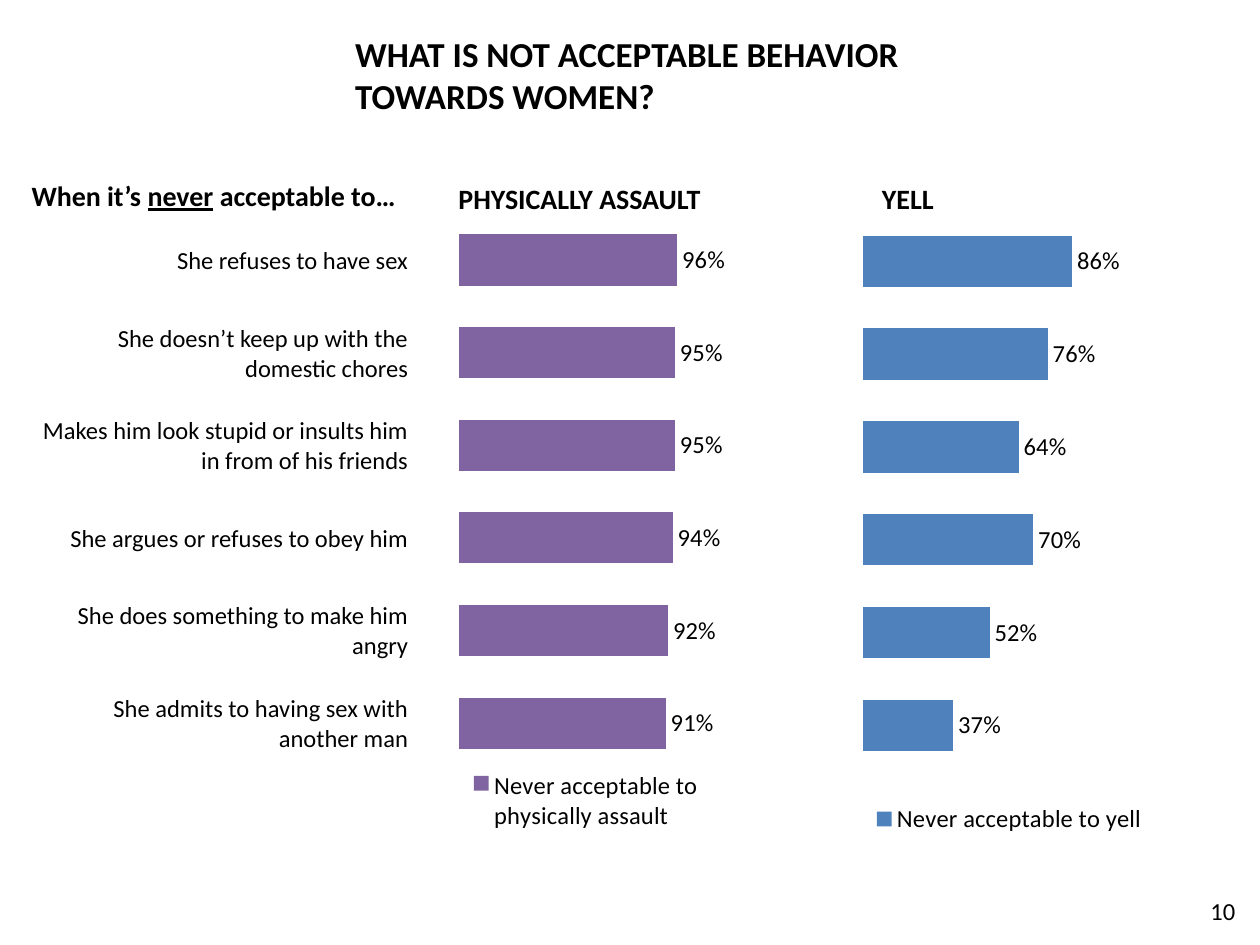
from pptx import Presentation
from pptx.chart.data import CategoryChartData
from pptx.dml.color import RGBColor
from pptx.enum.chart import XL_CHART_TYPE, XL_LABEL_POSITION, XL_LEGEND_POSITION
from pptx.enum.text import MSO_ANCHOR, PP_ALIGN
from pptx.oxml import parse_xml
from pptx.oxml.ns import nsdecls
from pptx.util import Pt

FONT = "Calibri"
COLORS = {"text": "000000", "assault": "8064A2", "yell": "4F81BD"}

# Situation, share saying never acceptable to assault, share for yelling
SITUATIONS = [
    ("She refuses to have sex", 0.96, 0.86),
    ("She doesn’t keep up with the domestic chores", 0.95, 0.76),
    ("Makes him look stupid or insults him in from of his friends", 0.95, 0.64),
    ("She argues or refuses to obey him", 0.94, 0.70),
    ("She does something to make him angry", 0.92, 0.52),
    ("She admits to having sex with another man", 0.91, 0.37),
]
# Series name, column in SITUATIONS, colour, chart frame, inner plot fractions
CHARTS = [
    ("Never acceptable to yell", 2, "yell",
     (483.12, 116.64, 187.2, 362.88), (0.055, 0.017, 0.889, 0.877)),
    ("Never acceptable to physically assault", 1, "assault",
     (246.96, 113.04, 175.68, 365.04), (0.086, 0.025, 0.889, 0.87)),
]
# Runs as (text, underlined), frame, size, bold, alignment
TEXTS = [
    ([("WHAT IS NOT ACCEPTABLE BEHAVIOR TOWARDS WOMEN?", False)],
     (195.84, 15.12, 374.4, 55.44), 20, True, PP_ALIGN.LEFT),
    ([("YELL", False)], (444.96, 100.08, 147.6, 26.64), 16, True, PP_ALIGN.CENTER),
    ([("PHYSICALLY ASSAULT", False)],
     (252, 100.08, 158.4, 26.64), 16, True, PP_ALIGN.CENTER),
    ([("When it’s ", False), ("never", True), (" acceptable to…", False)],
     (8.64, 98.64, 226.8, 26.64), 16, True, PP_ALIGN.CENTER),
    ([("10", False)], (677.52, 508.32, 42.48, 31.68), 14, False, PP_ALIGN.CENTER),
]
TABLE_FRAME = (20.16, 122.4, 213.84, 317.52)


def points(frame):
    return [Pt(length) for length in frame]


def style_font(font, size, bold=False):
    font.name = FONT
    font.size = Pt(size)
    font.bold = bold
    font.color.rgb = RGBColor.from_string(COLORS["text"])


def add_text(page, spans, frame, size, bold, alignment):
    box = page.shapes.add_textbox(*points(frame))
    box.text_frame.word_wrap = True
    para = box.text_frame.paragraphs[0]
    para.alignment = alignment
    for text, underlined in spans:
        span = para.add_run()
        span.text = text
        style_font(span.font, size, bold)
        if underlined:
            span.font.underline = True


def set_inner_plot(chart, fractions):
    """Fix the bar area at fractions (x, y, w, h) of the chart frame."""
    plot_area = chart.plots[0]._element.getparent()
    for old in plot_area.findall("{*}layout"):
        plot_area.remove(old)
    places = "".join(f'<c:{key} val="{value}"/>' for key, value in zip("xywh", fractions))
    plot_area.insert(0, parse_xml(
        f'<c:layout {nsdecls("c")}><c:manualLayout><c:layoutTarget val="inner"/>'
        f'<c:xMode val="edge"/><c:yMode val="edge"/>{places}</c:manualLayout></c:layout>'))


def add_bar_chart(page, name, column, color, frame, fractions):
    data = CategoryChartData(number_format="0%")
    # Bars are drawn from the bottom upwards
    data.categories = [str(number + 1) for number in range(len(SITUATIONS))]
    data.add_series(name, [row[column] for row in reversed(SITUATIONS)])
    chart = page.shapes.add_chart(XL_CHART_TYPE.BAR_CLUSTERED, *points(frame), data).chart
    style_font(chart.font, 18)
    chart.has_title = False
    chart.has_legend = True
    chart.legend.position = XL_LEGEND_POSITION.BOTTOM
    chart.legend.include_in_layout = False
    style_font(chart.legend.font, 14)

    chart.value_axis.minimum_scale = 0
    chart.value_axis.maximum_scale = 1.2
    for axis in (chart.category_axis, chart.value_axis):
        axis.has_major_gridlines = False
        axis.visible = False

    plot = chart.plots[0]
    plot.gap_width = 81
    plot.vary_by_categories = False
    fill = plot.series[0].format.fill
    fill.solid()
    fill.fore_color.rgb = RGBColor.from_string(COLORS[color])
    plot.has_data_labels = True
    labels = plot.data_labels
    labels.show_value = True
    labels.number_format = "0%"
    labels.number_format_is_linked = False
    labels.position = XL_LABEL_POSITION.OUTSIDE_END
    style_font(labels.font, 14)
    set_inner_plot(chart, fractions)


def add_situation_table(page):
    table = page.shapes.add_table(len(SITUATIONS), 1, *points(TABLE_FRAME)).table
    table.first_row = False
    table.horz_banding = False
    for index, (situation, *_) in enumerate(SITUATIONS):
        cell = table.cell(index, 0)
        cell.fill.background()
        cell.vertical_anchor = MSO_ANCHOR.MIDDLE
        cell.margin_left = cell.margin_right = cell.margin_top = Pt(0.75)
        cell.margin_bottom = Pt(0)
        cell.text_frame.text = situation
        para = cell.text_frame.paragraphs[0]
        para.alignment = PP_ALIGN.RIGHT
        style_font(para.runs[0].font, 14)


def main():
    deck = Presentation()
    deck.slide_width, deck.slide_height = Pt(720), Pt(540)
    page = deck.slides.add_slide(deck.slide_layouts[6])
    for chart in CHARTS:
        add_bar_chart(page, *chart)
    add_situation_table(page)
    for text in TEXTS:
        add_text(page, *text)
    deck.save("out.pptx")


if __name__ == "__main__":
    main()
